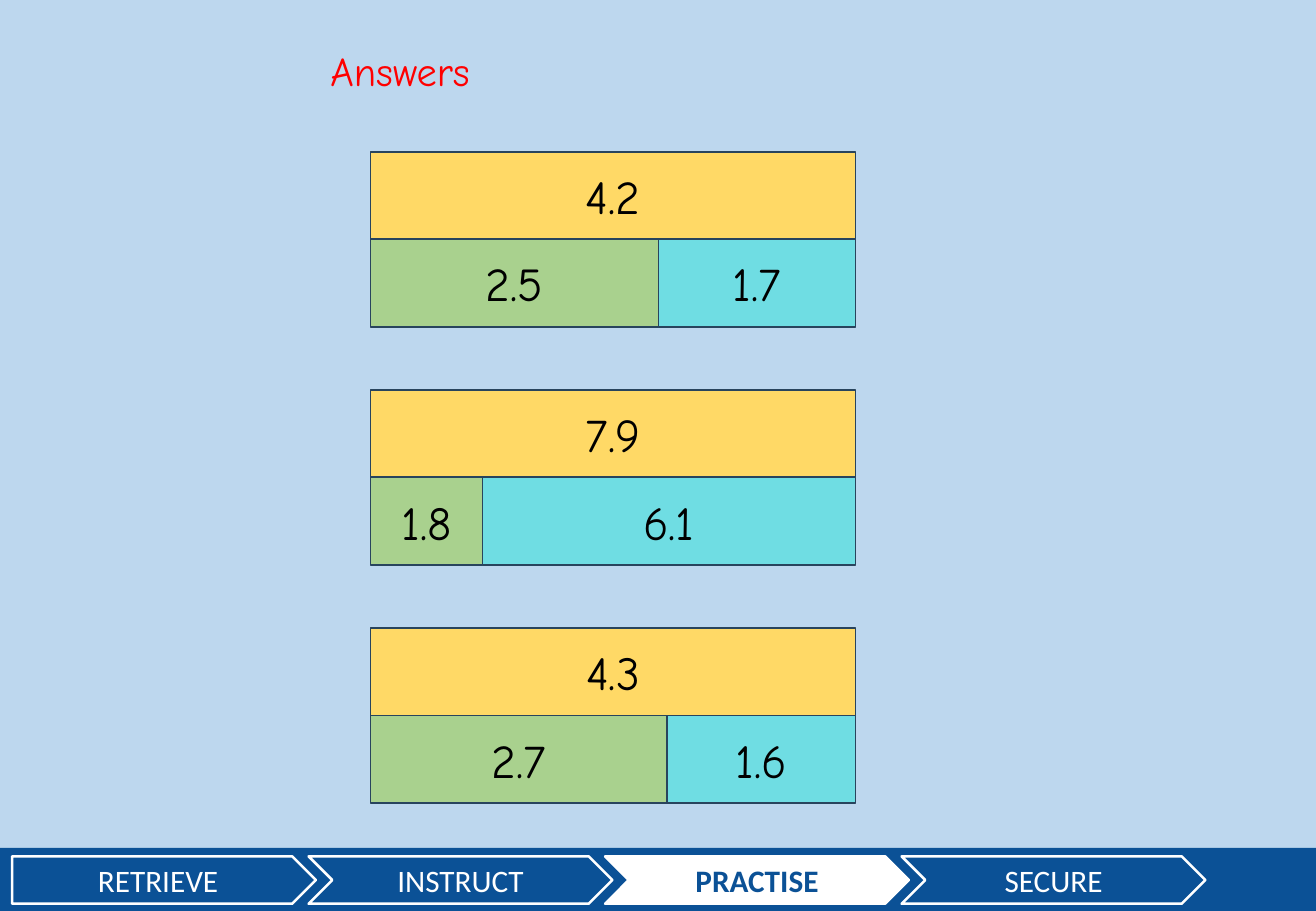
from pptx import Presentation
from pptx.dml.color import RGBColor
from pptx.enum.shapes import MSO_SHAPE
from pptx.enum.text import MSO_ANCHOR, MSO_AUTO_SIZE, PP_ALIGN
from pptx.util import Inches, Pt

RECT = MSO_SHAPE.RECTANGLE
PENTAGON = MSO_SHAPE.PENTAGON
CHEVRON = MSO_SHAPE.CHEVRON
MIDDLE = MSO_ANCHOR.MIDDLE
CENTER = PP_ALIGN.CENTER
GROW = MSO_AUTO_SIZE.SHAPE_TO_FIT_TEXT

COLORS = {
    "sky": "BDD7EE", "navy": "0B5196", "white": "FFFFFF", "red": "FF0000",
    "black": "000000", "gold": "FFD966", "green": "A9D18E", "aqua": "6FDDE3",
    "edge": "28445D",
}
FONTS = {
    "title": {"name": "Comic Neue", "size": Pt(24)},
    "number": {"name": "Comic Neue", "size": Pt(28)},
    "step": {"name": "Calibri", "size": Pt(18.5), "bold": False},
    "active": {"name": "Calibri", "size": Pt(18.5), "bold": True},
}
WIDTH, HEIGHT = 10.83, 7.5

# Whole, left part, right part, width of the left part
MODELS = [
    ("4.2", "2.5", "1.7", 2.37),
    ("7.9", "1.8", "6.1", 0.92),
    ("4.3", "2.7", "1.6", 2.44),
]
STEPS = ["RETRIEVE", "INSTRUCT", "PRACTISE", "SECURE"]
ACTIVE = "PRACTISE"


def color(name):
    return RGBColor.from_string(COLORS[name])


def write(frame, text, style, ink):
    para = frame.paragraphs[0]
    run = para.add_run()
    run.text = text
    for key, value in FONTS[style].items():
        setattr(run.font, key, value)
    run.font.color.rgb = color(ink)
    return para


def add_block(slide, kind, box, fill, line=None, weight=1):
    shape = slide.shapes.add_shape(kind, *map(Inches, box))
    shape.shadow.inherit = False
    shape.fill.solid()
    shape.fill.fore_color.rgb = color(fill)
    if line:
        shape.line.color.rgb = color(line)
        shape.line.width = Pt(weight)
    else:
        shape.line.fill.background()
    return shape


def label(shape, text, style, ink):
    shape.text_frame.vertical_anchor = MIDDLE
    write(shape.text_frame, text, style, ink).alignment = CENTER


def add_title(slide, box, text):
    frame = slide.shapes.add_textbox(*map(Inches, box)).text_frame
    frame.word_wrap = False
    frame.auto_size = GROW
    write(frame, text, "title", "red")


def add_model(slide, box, model):
    """Draw a bar model: the whole above its two parts."""
    left, top, width, height = box
    whole, first, second, split = model
    row = height / 2
    bars = [
        (whole, "gold", (left, top, width, row)),
        (first, "green", (left, top + row, split, row)),
        (second, "aqua", (left + split, top + row, width - split, row)),
    ]
    for text, fill, place in bars:
        label(add_block(slide, RECT, place, fill, "edge"), text, "number", "black")


def add_steps(slide, box):
    """Draw the lesson steps along the bottom band."""
    left, top, width, height = box
    add_block(slide, RECT, box, "navy")
    for i, text in enumerate(STEPS):
        kind = CHEVRON if i else PENTAGON
        active = text == ACTIVE
        fill, ink = ("white", "navy") if active else ("navy", "white")
        place = (left + 0.1 + i * 2.44, top + 0.07, 2.5, 0.39)
        step = add_block(slide, kind, place, fill, "white", 1.5)
        label(step, text, "active" if active else "step", ink)


def main():
    deck = Presentation()
    deck.slide_width, deck.slide_height = Inches(WIDTH), Inches(HEIGHT)
    slide = deck.slides.add_slide(deck.slide_layouts[6])
    slide.background.fill.solid()
    slide.background.fill.fore_color.rgb = color("sky")
    add_steps(slide, (0, 6.98, WIDTH, 0.52))
    add_title(slide, (2.62, 0.33, 1.53, 0.5), "Answers")
    for i, model in enumerate(MODELS):
        add_model(slide, (3.05, 1.25 + i * 1.96, 3.99, 1.44), model)
    deck.save("out.pptx")


if __name__ == "__main__":
    main()
